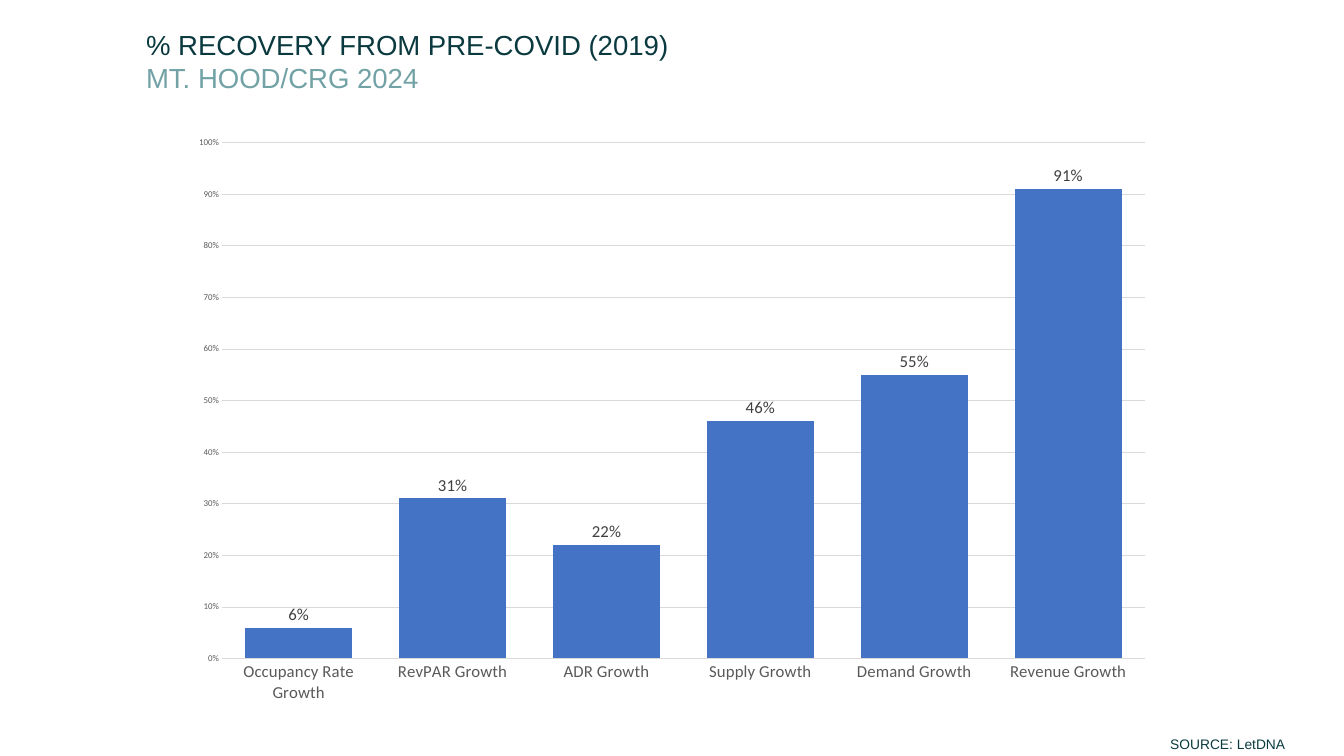
from pptx import Presentation
from pptx.chart.data import CategoryChartData
from pptx.dml.color import RGBColor
from pptx.enum import chart as ch, text
from pptx.util import Cm, Pt

DARK_TEAL = RGBColor(0x0A, 0x3A, 0x3F)
SOFT_TEAL = RGBColor(0x72, 0xA2, 0xA6)
BLUE = RGBColor(0x44, 0x72, 0xC4)
GRID = RGBColor(0xD9, 0xD9, 0xD9)
AXIS_TEXT = RGBColor(0x59, 0x59, 0x59)
LABEL_TEXT = RGBColor(0x40, 0x40, 0x40)

GROWTH = {
    "Occupancy Rate Growth": 0.06,
    "RevPAR Growth": 0.31,
    "ADR Growth": 0.22,
    "Supply Growth": 0.46,
    "Demand Growth": 0.55,
    "Revenue Growth": 0.91,
}


def style_font(font, name, size, color):
    font.name = name
    font.size = Pt(size)
    font.color.rgb = color


def fill_text(sp, lines, size):
    tf = sp.text_frame
    tf.word_wrap = True
    tf.auto_size = text.MSO_AUTO_SIZE.NONE
    tf.vertical_anchor = text.MSO_ANCHOR.TOP
    tf.text = "\n".join(line for line, _ in lines)
    for p, (_, color) in zip(tf.paragraphs, lines):
        p.alignment = text.PP_ALIGN.LEFT
        style_font(p.runs[0].font, "Arial", size, color)


def place_title(s, left, top, width, height):
    sp = s.shapes.title
    sp.left, sp.top, sp.width, sp.height = left, top, width, height
    fill_text(sp, [("% RECOVERY FROM PRE-COVID (2019)", DARK_TEAL),
                   ("MT. HOOD/CRG 2024", SOFT_TEAL)], 28)


def add_source(s, left, top, width, height):
    sp = s.shapes.add_textbox(left, top, width, height)
    fill_text(sp, [("SOURCE: LetDNA", DARK_TEAL)], 14)


def add_growth_chart(s, left, top, width, height):
    data = CategoryChartData(number_format="0%")
    data.categories = list(GROWTH)
    data.add_series("Series 1", list(GROWTH.values()))
    chart = s.shapes.add_chart(ch.XL_CHART_TYPE.COLUMN_CLUSTERED,
                               left, top, width, height, data).chart
    chart.has_legend = False
    chart.has_title = False
    chart.font.name = "Calibri"
    chart.font.size = Pt(10)

    plot = chart.plots[0]
    plot.gap_width = 44
    plot.overlap = -27
    plot.vary_by_categories = False
    fill = plot.series[0].format.fill
    fill.solid()
    fill.fore_color.rgb = BLUE

    plot.has_data_labels = True
    labels = plot.data_labels
    labels.show_value = True
    labels.number_format = "0%"
    labels.number_format_is_linked = False
    labels.position = ch.XL_LABEL_POSITION.OUTSIDE_END
    style_font(labels.font, "Calibri", 17, LABEL_TEXT)

    cat, val = chart.category_axis, chart.value_axis
    for axis, size in ((cat, 17), (val, 9)):
        axis.major_tick_mark = ch.XL_TICK_MARK.NONE
        axis.minor_tick_mark = ch.XL_TICK_MARK.NONE
        style_font(axis.tick_labels.font, "Calibri", size, AXIS_TEXT)
    val.minimum_scale, val.maximum_scale, val.major_unit = 0, 1, 0.1
    val.tick_labels.number_format = "0%"
    val.tick_labels.number_format_is_linked = False
    val.format.line.fill.background()
    val.has_major_gridlines = True
    for line in (cat.format.line, val.major_gridlines.format.line):
        line.color.rgb = GRID
        line.width = Pt(0.75)


def main():
    prs = Presentation()
    prs.slide_width, prs.slide_height = Cm(48.16), Cm(27.1)
    s = prs.slides.add_slide(prs.slide_layouts[5])
    place_title(s, Cm(4.98), Cm(0.86), Cm(24.43), Cm(2.64))
    add_source(s, Cm(41.68), Cm(26.24), Cm(6.4), Cm(0.86))
    add_growth_chart(s, Cm(6.43), Cm(4.5), Cm(35.31), Cm(21.11))
    prs.save("out.pptx")


if __name__ == "__main__":
    main()
